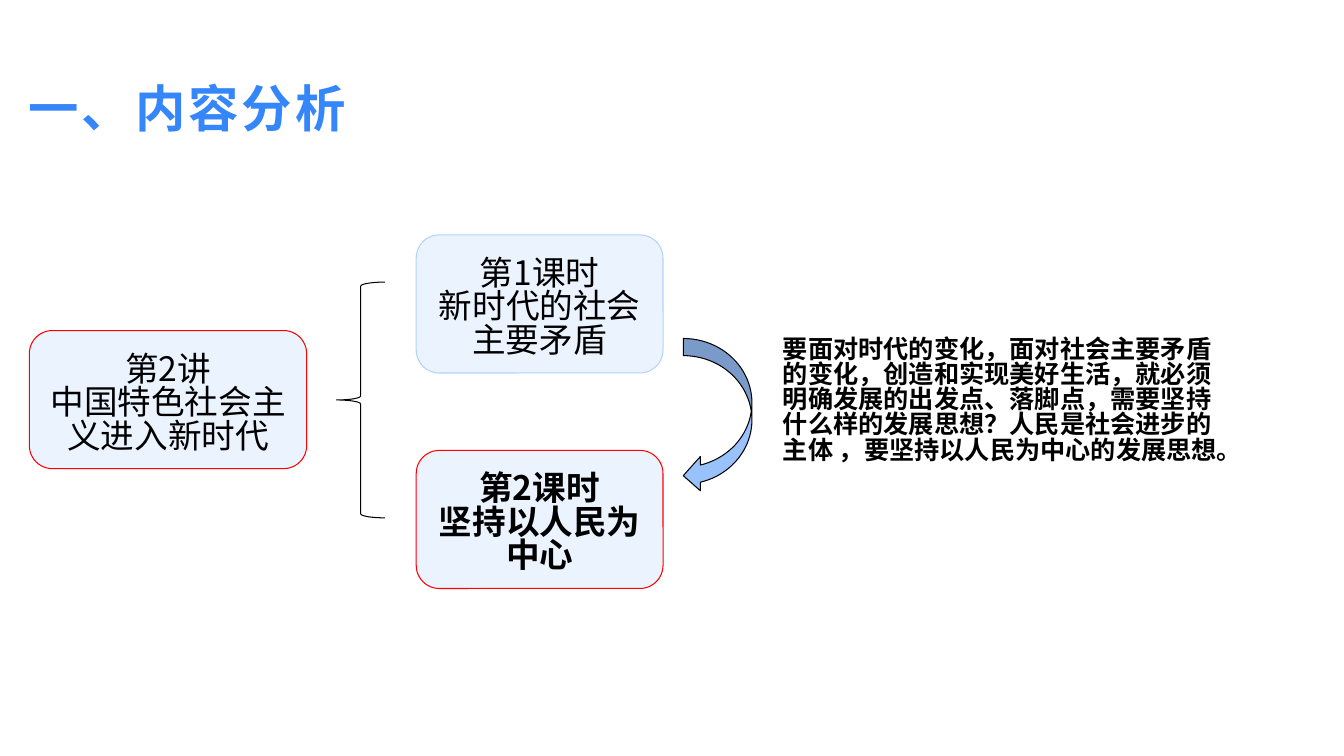
from pptx import Presentation
from pptx.dml.color import RGBColor
from pptx.enum.shapes import MSO_SHAPE as Preset
from pptx.enum.text import MSO_ANCHOR as Anchor, MSO_AUTO_SIZE as AutoSize, PP_ALIGN as Align
from pptx.oxml.ns import qn
from pptx.util import Cm, Pt

BLACK = RGBColor(0x00, 0x00, 0x00)
RED = RGBColor(0xFF, 0x00, 0x00)
TITLE_BLUE = RGBColor(0x35, 0x86, 0xFB)
PALE_BLUE = RGBColor(0xEB, 0xF3, 0xFF)
BORDER_BLUE = RGBColor(0xB3, 0xD2, 0xFD)
ARROW_BLUE = RGBColor(0x99, 0xC2, 0xFD)

LESSON_LEFT, LESSON_WIDTH, BOX_HEIGHT = 10.49, 6.22, 3.48


class SlideBuilder:
    def __init__(self, slide, font_name):
        self.slide = slide
        self.font_name = font_name

    def fill_text(self, text_frame, lines, format_values, frame_values, align=Align.LEFT, line_spacing=0.83):
        for name, value in frame_values.items():
            setattr(text_frame, name, value)
        for index, line in enumerate(lines):
            paragraph = text_frame.paragraphs[0] if index == 0 else text_frame.add_paragraph()
            paragraph.alignment = align
            paragraph.line_spacing = line_spacing
            run = paragraph.add_run()
            run.text = line
            self.format_run(run, **format_values)

    def format_run(self, run, color=BLACK, spacing=None, **font_values):
        """Apply font values, plus the East Asian typeface and letter spacing."""
        for name, value in {"name": self.font_name, **font_values}.items():
            setattr(run.font, name, value)
        run.font.color.rgb = color
        properties = run._r.get_or_add_rPr()
        if spacing is not None:
            properties.set("spc", str(spacing))
        east_asian = properties.makeelement(qn("a:ea"), {"typeface": self.font_name})
        properties.find(qn("a:latin")).addnext(east_asian)

    def title(self, text, left, top, width, height):
        title = self.slide.shapes.title
        place = {"left": left, "top": top, "width": width, "height": height}
        for name, value in place.items():
            setattr(title, name, Cm(value))
        frame_values = {
            "auto_size": AutoSize.NONE, "vertical_anchor": Anchor.BOTTOM, "word_wrap": True,
            "margin_left": Cm(0.18), "margin_right": Cm(0.18),
            "margin_top": Cm(0.08), "margin_bottom": Cm(0.08),
        }
        font = {"size": Pt(36), "bold": True, "color": TITLE_BLUE, "spacing": 220}
        self.fill_text(title.text_frame, [text], font, frame_values, line_spacing=1.0)

    def shape(self, preset, left, top, width, height, line_color=BLACK, fill_color=None):
        shape = self.slide.shapes.add_shape(preset, Cm(left), Cm(top), Cm(width), Cm(height))
        shape.shadow.inherit = False
        if fill_color is None:
            shape.fill.background()
        else:
            shape.fill.solid()
            shape.fill.fore_color.rgb = fill_color
        shape.line.color.rgb = line_color
        shape.line.width = Pt(0.75)
        return shape

    def box(self, lines, left, top, width, line_color, bold=False):
        box = self.shape(Preset.ROUNDED_RECTANGLE, left, top, width, BOX_HEIGHT, line_color, PALE_BLUE)
        frame_values = {
            "word_wrap": True, "vertical_anchor": Anchor.MIDDLE,
            "margin_top": Cm(0.25), "margin_bottom": Cm(0),
        }
        self.fill_text(box.text_frame, lines, {"size": Pt(24), "bold": bold}, frame_values, Align.CENTER)

    def text(self, text, left, top, width, height):
        box = self.slide.shapes.add_textbox(Cm(left), Cm(top), Cm(width), Cm(height))
        frame_values = {"word_wrap": True, "auto_size": AutoSize.SHAPE_TO_FIT_TEXT}
        self.fill_text(box.text_frame, [text], {"size": Pt(18), "bold": True}, frame_values)


def main():
    presentation = Presentation()
    presentation.slide_width, presentation.slide_height = Cm(33.87), Cm(19.05)
    slide = presentation.slides.add_slide(presentation.slide_layouts[5])
    builder = SlideBuilder(slide, "Noto Sans CJK SC")

    builder.title("一、内容分析", 0.53, 1.6, 16.18, 1.96)
    builder.box(["第2讲", "中国特色社会主义进入新时代"], 0.74, 8.33, 6.99, RED)
    builder.box(["第2课时", "坚持以人民为中心"], LESSON_LEFT, 11.35, LESSON_WIDTH, RED, bold=True)
    builder.box(["第1课时", "新时代的社会主要矛盾"], LESSON_LEFT, 5.92, LESSON_WIDTH, BORDER_BLUE)
    builder.text(
        "要面对时代的变化，面对社会主要矛盾的变化，创造和实现美好生活，"
        "就必须明确发展的出发点、落脚点，需要坚持什么样的发展思想？"
        "人民是社会进步的主体 ，要坚持以人民为中心的发展思想。",
        19.48, 8.41, 11.61, 4.09,
    )
    builder.shape(Preset.LEFT_BRACE, 8.48, 7.11, 1.22, 5.94)
    builder.shape(Preset.CURVED_LEFT_ARROW, 17.22, 8.53, 1.73, 3.89, fill_color=ARROW_BLUE)
    presentation.save("out.pptx")


if __name__ == "__main__":
    main()
